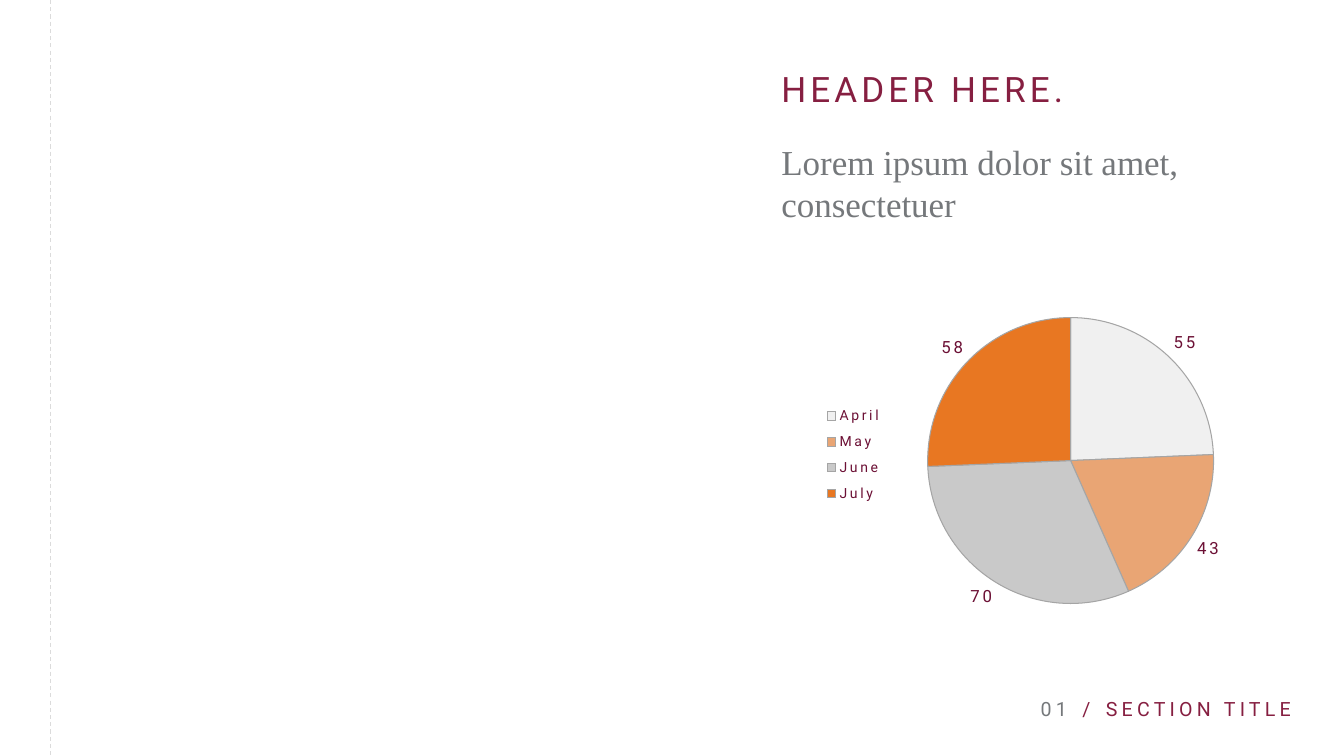
from lxml import etree
from pptx import Presentation
from pptx import util as u
from pptx.chart.data import CategoryChartData
from pptx.dml.color import RGBColor
from pptx.enum import chart as ch, dml, shapes, text
from pptx.oxml import ns

C = {"maroon": "861F41", "dark": "6C1035", "grey": "75787B",
     "rule": "DBDBDB", "outline": "A5A5A5"}
SLICES = [("April", 55, "EDEDED"), ("May", 43, "E9A574"),
          ("June", 70, "C9C9C9"), ("July", 58, "E87722")]
SANS, SERIF = "Roboto", "Times New Roman"


def rgb(value):
    return RGBColor.from_string(value)


def add(parent, tag, **attrs):
    return etree.SubElement(parent, ns.qn(tag), attrs)


def style_font(font, size, color, name):
    font.size, font.name = u.Pt(size), name
    font.color.rgb = rgb(color)


def put_text(sp, box, words, size, color, name=SANS, spacing=0,
             align=text.PP_ALIGN.LEFT, anchor=text.MSO_ANCHOR.TOP, leading=1.0):
    """Place a text shape in its box and format its single line of text."""
    sp.left, sp.top, sp.width, sp.height = map(u.Cm, box)
    tf = sp.text_frame
    tf.text = words
    tf.word_wrap, tf.auto_size = True, text.MSO_AUTO_SIZE.NONE
    tf.vertical_anchor = anchor
    tf.margin_left = tf.margin_right = tf.margin_top = tf.margin_bottom = u.Cm(0.13)
    p = tf.paragraphs[0]
    p.alignment, p.line_spacing, p.space_before = align, leading, u.Pt(0)
    r = p.runs[0]
    style_font(r.font, size, color, name)
    if spacing:
        r.font._element.set("spc", str(spacing * 100))
    return p


def heading(s, x, y, w):
    put_text(s.shapes.title, (x, y, w, 1.32), "HEADER HERE.", 25, C["maroon"], spacing=3)
    p = put_text(s.placeholders[1], (x, y + 1.83, w, 2.39),
                 "Lorem ipsum dolor sit amet, consectetuer", 25, C["grey"], SERIF)
    pPr = p._p.get_or_add_pPr()
    pPr.set("marL", "0")
    pPr.set("indent", "0")
    add(pPr, "a:buNone")


def footer(s, x, y, h):
    right, left = text.PP_ALIGN.RIGHT, text.PP_ALIGN.LEFT
    parts = [("01", 0, 1.98, C["grey"], 3, right),
             ("/", 1.88, 0.69, C["maroon"], 2, right),
             ("SECTION TITLE", 2.7, 6, C["maroon"], 3, left)]
    for words, dx, w, color, spacing, align in parts:
        sp = s.shapes.add_textbox(0, 0, 0, 0)
        put_text(sp, (x + dx, y, w, h), words, 14, color, spacing=spacing,
                 align=align, anchor=text.MSO_ANCHOR.BOTTOM, leading=0.9)


def manual_layout(parent, after, x, y, w, h, inner=False):
    """Fix a chart part at fractions of the chart area."""
    for old in parent.findall(ns.qn("c:layout")):
        parent.remove(old)
    layout = etree.Element(ns.qn("c:layout"))
    manual = add(layout, "c:manualLayout")
    if inner:
        add(manual, "c:layoutTarget", val="inner")
    for mode in ("xMode", "yMode"):
        add(manual, "c:" + mode, val="edge")
    for key, val in zip("xywh", (x, y, w, h)):
        add(manual, "c:" + key, val=str(val))
    if after is None:
        parent.insert(0, layout)
    else:
        after.addnext(layout)


def pie(s, x, y, w, h):
    data = CategoryChartData()
    data.categories = [name for name, _, _ in SLICES]
    data.add_series("Series 1", [value for _, value, _ in SLICES])
    chart = s.shapes.add_chart(ch.XL_CHART_TYPE.PIE, *map(u.Cm, (x, y, w, h)), data).chart
    chart.has_title = False
    style_font(chart.font, 10, C["maroon"], SANS)

    # Slices
    plot = chart.plots[0]
    plot.vary_by_categories = True
    for i, (_, _, color) in enumerate(SLICES):
        fmt = plot.series[0].points[i].format
        fmt.fill.solid()
        fmt.fill.fore_color.rgb = rgb(color)
        fmt.line.color.rgb = rgb(C["outline"])
        fmt.line.width = u.Pt(0.75)
    first_fill = chart.element.find(".//" + ns.qn("c:dPt")).find(".//" + ns.qn("a:srgbClr"))
    add(first_fill, "a:alpha", val="80000")

    # Value labels
    labels = plot.series[0].data_labels
    labels.show_value = True
    labels.position = ch.XL_LABEL_POSITION.OUTSIDE_END
    labels.number_format, labels.number_format_is_linked = "0", False
    style_font(labels.font, 12, C["dark"], SANS)

    # Legend
    chart.has_legend = True
    legend = chart.legend
    legend.position = ch.XL_LEGEND_POSITION.LEFT
    legend.include_in_layout = False
    style_font(legend.font, 10, C["dark"], SANS)

    for props in chart.element.iter(ns.qn("a:defRPr")):
        props.set("spc", "200")
    manual_layout(chart.element.find(".//" + ns.qn("c:plotArea")), None,
                  0.222, 0.238, 0.728, 0.504, inner=True)
    box = chart.element.find(".//" + ns.qn("c:legend"))
    manual_layout(box, box.find(ns.qn("c:legendPos")), 0.16, 0.38, 0.13, 0.2)


def margin_rule(s, x, y, h):
    line = s.shapes.add_connector(shapes.MSO_CONNECTOR.STRAIGHT,
                                  u.Cm(x), u.Cm(y), u.Cm(x), u.Cm(y + h))
    line.line.color.rgb = rgb(C["rule"])
    line.line.width = u.Pt(0.75)
    line.line.dash_style = dml.MSO_LINE.DASH
    add(line._element.spPr, "a:effectLst")


def main():
    prs = Presentation()
    prs.slide_width, prs.slide_height = u.Cm(33.87), u.Cm(19.05)
    s = prs.slides.add_slide(prs.slide_layouts[1])
    pie(s, 18.08, 4.6, 15.19, 14.3)
    heading(s, 19.56, 1.57, 11.33)
    footer(s, 25.04, 17.15, 1.14)
    margin_rule(s, 1.27, 0, 19.05)
    prs.save("out.pptx")


if __name__ == "__main__":
    main()
